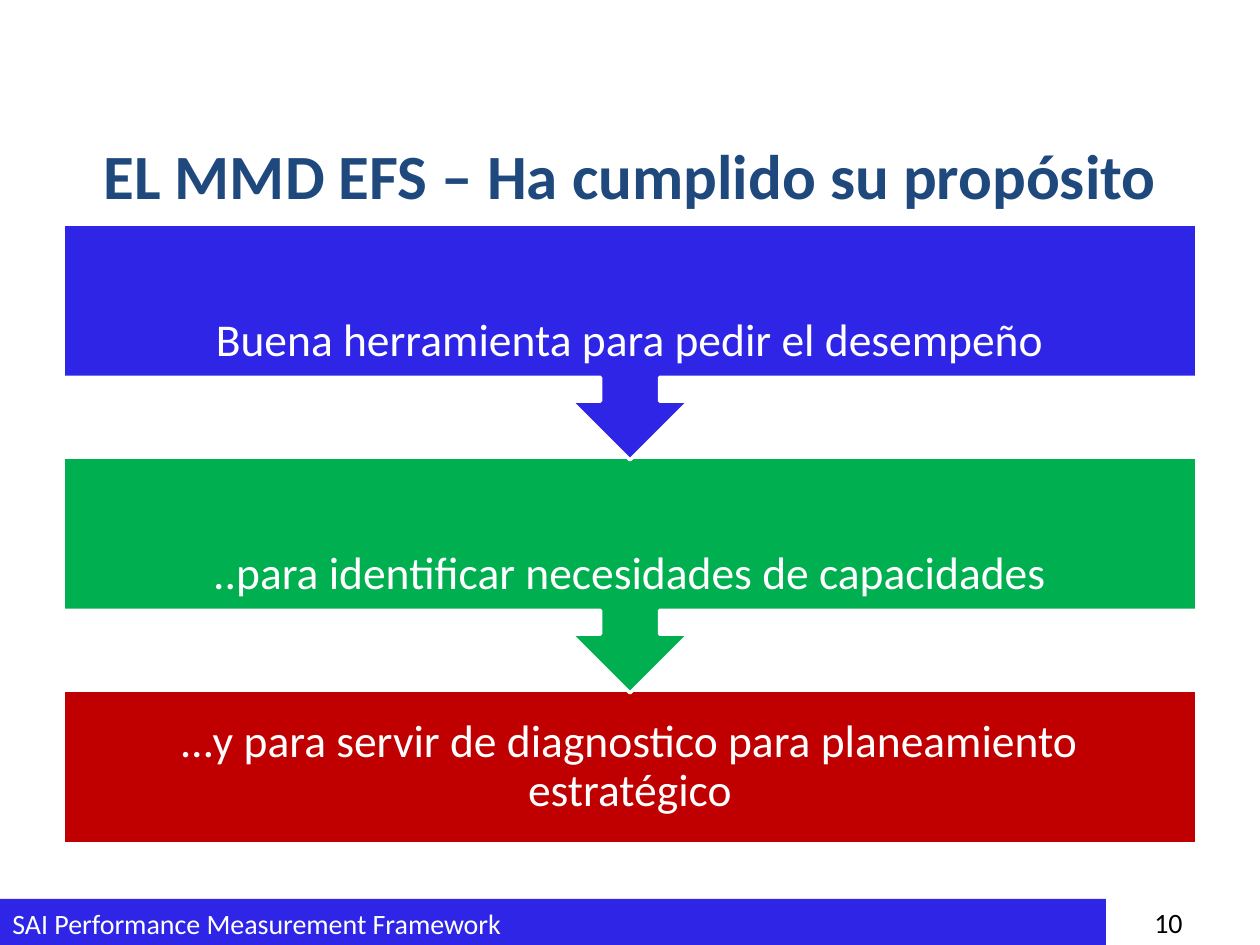
from pptx import Presentation
from pptx import util as u
from pptx.dml.color import RGBColor
from pptx.enum import shapes, text

SCALE = 914400 / 126  # EMU per px
BLUE, GREEN, RED = "2E25E7", "00B050", "C00000"
WHITE, NAVY, BLACK = "FFFFFF", "1F497D", "000000"
ALIGN, ANCHOR, SHAPE = text.PP_ALIGN, text.MSO_ANCHOR, shapes.MSO_SHAPE

LEFT, TOP, WIDTH, STEP = 63, 224, 1134, 233
CALLOUT_H, LAST_H, PADDING = 236, 154, 25
STAGES = [
    ("Buena herramienta para pedir el desempeño", BLUE),
    ("..para identificar necesidades de capacidades", GREEN),
    ("…y para servir de diagnostico para planeamiento estratégico", RED),
]


def px(n):
    return u.Emu(round(n * SCALE))


def color(value):
    return RGBColor.from_string(value)


def write(sp, words, size, ink, align=ALIGN.LEFT, anchor=ANCHOR.MIDDLE,
          bold=False, spacing=1.0, padding=None):
    tf = sp.text_frame
    frame = {"word_wrap": True, "vertical_anchor": anchor}
    if padding is not None:
        for side in ("left", "top", "right", "bottom"):
            frame["margin_" + side] = px(padding)
    for name, value in frame.items():
        setattr(tf, name, value)
    p = tf.paragraphs[0]
    p.alignment, p.line_spacing = align, spacing
    r = p.add_run()
    r.text = words
    for name, value in {"name": "Calibri", "size": u.Pt(size), "bold": bold}.items():
        setattr(r.font, name, value)
    r.font.color.rgb = color(ink)


def add_label(s, box, words, size, ink, **fmt):
    write(s.shapes.add_textbox(*map(px, box)), words, size, ink, **fmt)


def add_block(s, kind, box, fill, line=None):
    sp = s.shapes.add_shape(kind, *map(px, box))
    sp.shadow.inherit = False
    sp.fill.solid()
    sp.fill.fore_color.rgb = color(fill)
    if line:
        sp.line.color.rgb = color(line)
        sp.line.width = u.Pt(2)
    else:
        sp.line.fill.background()
    return sp


def add_stages(s):
    # Drawn from the bottom up so each arrow tip lies over the next block
    last = len(STAGES) - 1
    for i, (words, fill) in reversed(list(enumerate(STAGES))):
        box = (LEFT, TOP + i * STEP, WIDTH, LAST_H if i == last else CALLOUT_H)
        kind = SHAPE.RECTANGLE if i == last else SHAPE.UP_ARROW_CALLOUT
        sp = add_block(s, kind, box, fill, WHITE)
        if i < last:
            sp.rotation = 180
        # Separate text keeps the words upright over the turned callout
        add_label(s, box, words, 26, WHITE, align=ALIGN.CENTER,
                  spacing=0.9, padding=PADDING)


def main():
    prs = Presentation()
    prs.slide_width, prs.slide_height = u.Inches(10), u.Inches(7.5)
    s = prs.slides.add_slide(prs.slide_layouts[6])

    # Footer bar and page number
    bar = add_block(s, SHAPE.RECTANGLE, (0, 899, 1106, 49), BLUE)
    write(bar, "SAI Performance Measurement Framework", 16, WHITE)
    add_label(s, (1106, 899, 89, 46), "10", 16, BLACK,
              align=ALIGN.RIGHT, anchor=ANCHOR.TOP)

    # Title
    add_label(s, (LEFT, 135, WIDTH, 79), "EL MMD EFS – Ha cumplido su propósito",
              36, NAVY, align=ALIGN.CENTER, bold=True)

    # Process steps
    add_stages(s)
    prs.save("out.pptx")


if __name__ == "__main__":
    main()
